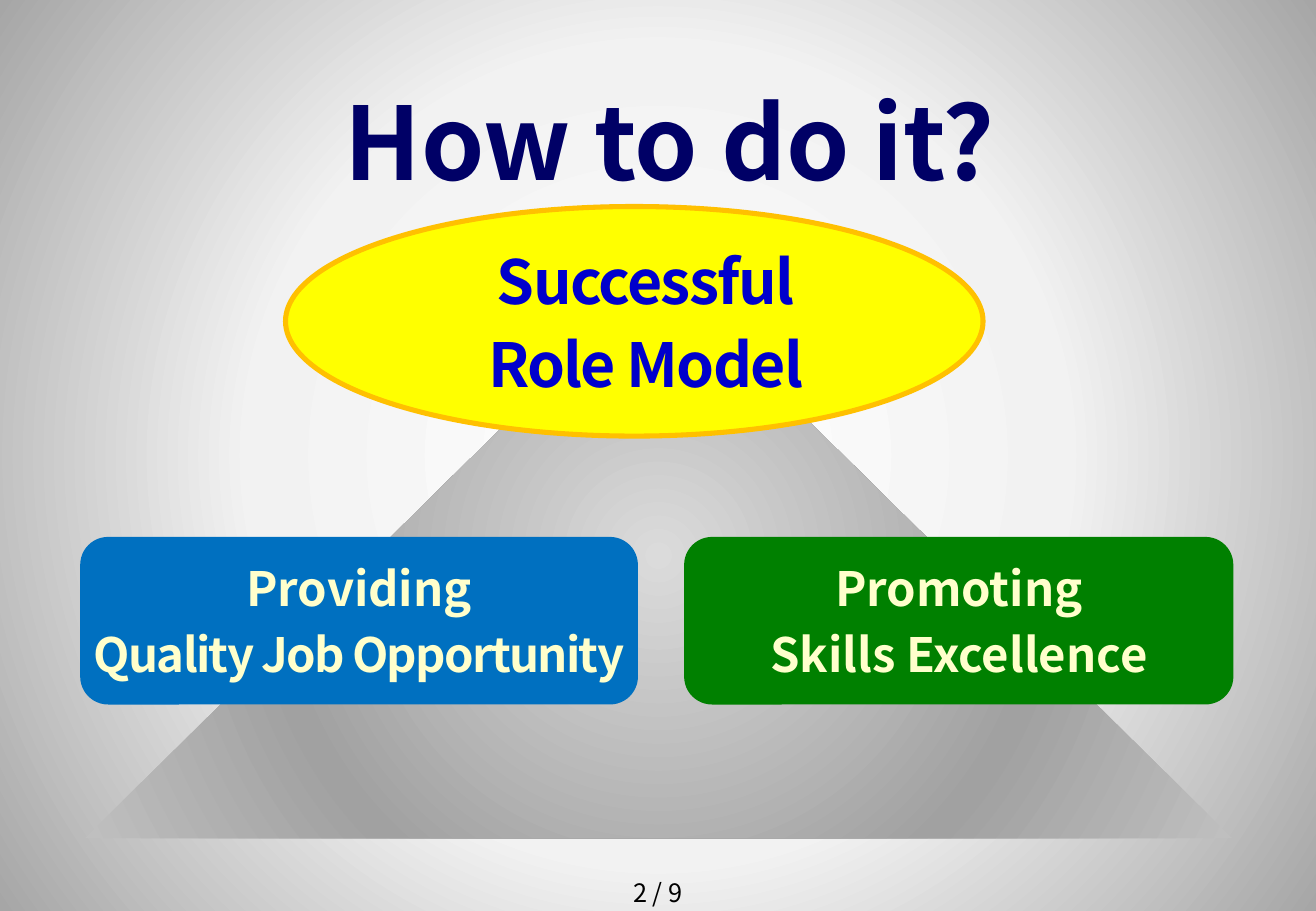
from lxml import etree
from pptx import Presentation
from pptx.dml.color import RGBColor
from pptx.enum.shapes import MSO_SHAPE as SHAPE
from pptx.enum.text import MSO_ANCHOR as ANCHOR, PP_ALIGN as ALIGN
from pptx.oxml.ns import qn
from pptx.util import Pt

PX = 9144  # 100 px to the inch
FONT = "Noto Sans CJK KR"


def px(*lengths):
    return [n * PX for n in lengths]


def color(hex_string):
    return RGBColor.from_string(hex_string)


def set_radial_fill(parent, stops):
    """Replace the solid fill of parent with a gradient around its centre."""
    old = parent.find(qn("a:solidFill"))
    grad = etree.Element(qn("a:gradFill"), rotWithShape="1")
    stop_list = etree.SubElement(grad, qn("a:gsLst"))
    for percent, rgb in stops:
        stop = etree.SubElement(stop_list, qn("a:gs"), pos=str(percent * 1000))
        etree.SubElement(stop, qn("a:srgbClr"), val=rgb)
    path = etree.SubElement(grad, qn("a:path"), {"path": "circle"})
    etree.SubElement(path, qn("a:fillToRect"), l="50000", t="50000", r="50000", b="50000")
    parent.replace(old, grad)


def write(tf, lines, size, rgb, bold=True, after=0, margin=0, tight=()):
    """Write one centred paragraph a line; lines in tight are set 1 pt closer."""
    for i, line in enumerate(lines):
        p = tf.paragraphs[0] if i == 0 else tf.add_paragraph()
        p.alignment = ALIGN.CENTER
        p.space_after = Pt(after)
        if margin:
            p_pr = p._p.get_or_add_pPr()
            p_pr.set("marL", str(margin * PX))
            p_pr.set("indent", "0")
        r = p.add_run()
        r.text = line
        r.font.name, r.font.size, r.font.bold = FONT, Pt(size), bold
        r.font.color.rgb = color(rgb)
        r_pr = r._r.get_or_add_rPr()
        etree.SubElement(r_pr, qn("a:ea"), typeface=FONT)
        if line in tight:
            r_pr.set("spc", "-100")


def add_text(s, box, lines, **text_format):
    tf = s.shapes.add_textbox(*px(*box)).text_frame
    tf.word_wrap = True
    write(tf, lines, **text_format)


def add_figure(s, kind, box, fill, line=None):
    sp = s.shapes.add_shape(kind, *px(*box))
    sp.shadow.inherit = False
    sp.fill.solid()
    sp.fill.fore_color.rgb = color(fill)
    if line:
        sp.line.color.rgb = color(line)
        sp.line.width = Pt(3)
    else:
        sp.line.fill.background()
    return sp


def add_label(s, kind, box, fill, lines, line=None, **text_format):
    tf = add_figure(s, kind, box, fill, line).text_frame
    tf.word_wrap = False
    tf.vertical_anchor = ANCHOR.MIDDLE
    tf.margin_left = tf.margin_right = 8 * PX
    tf.margin_top = tf.margin_bottom = 12 * PX
    write(tf, lines, after=6, **text_format)


def add_background(s):
    s.background.fill.solid()
    set_radial_fill(s.element.find(".//" + qn("p:bgPr")),
                    [(0, "FFFFFF"), (51, "F2F2F2"), (100, "A6A6A6")])


def add_pyramid(s, box):
    """Place the triangle, the goal on its top and the two means across it."""
    x, y, w, h = box
    triangle = add_figure(s, SHAPE.ISOSCELES_TRIANGLE, box, "DBDBDB")
    triangle.adjustments[0] = 0.5
    set_radial_fill(triangle.element.spPr,
                    [(0, "DBDBDB"), (61, "A1A1A1"), (100, "BFBFBF")])

    goal = ["Successful", "Role Model"]
    add_label(s, SHAPE.OVAL, (x + 165, y - 55, 574, 189), "FFFF00", goal, line="FFC000",
              size=36, rgb="0000CC", margin=19, tight=goal)

    means = [
        (-4, 459, "0070C0", ["Providing", "Quality Job Opportunity"]),
        (493, 452, "008000", ["Promoting", "Skills Excellence"]),
    ]
    for dx, width, fill, lines in means:
        add_label(s, SHAPE.ROUNDED_RECTANGLE, (x + dx, y + 217, width, 138), fill, lines,
                  size=28, rgb="FFFFCC", tight=["Quality Job Opportunity"])


def main():
    prs = Presentation()
    prs.slide_width, prs.slide_height = px(1083, 750)
    s = prs.slides.add_slide(prs.slide_layouts[6])
    add_background(s)
    add_text(s, (70, 60, 943, 559), ["How to do it?"],
             size=60, rgb="000066", after=24, margin=19)
    add_pyramid(s, (70, 225, 944, 465))
    add_text(s, (425, 717, 233, 28), ["2 / 9"], size=15, rgb="000000", bold=False)
    prs.save("out.pptx")


if __name__ == "__main__":
    main()
